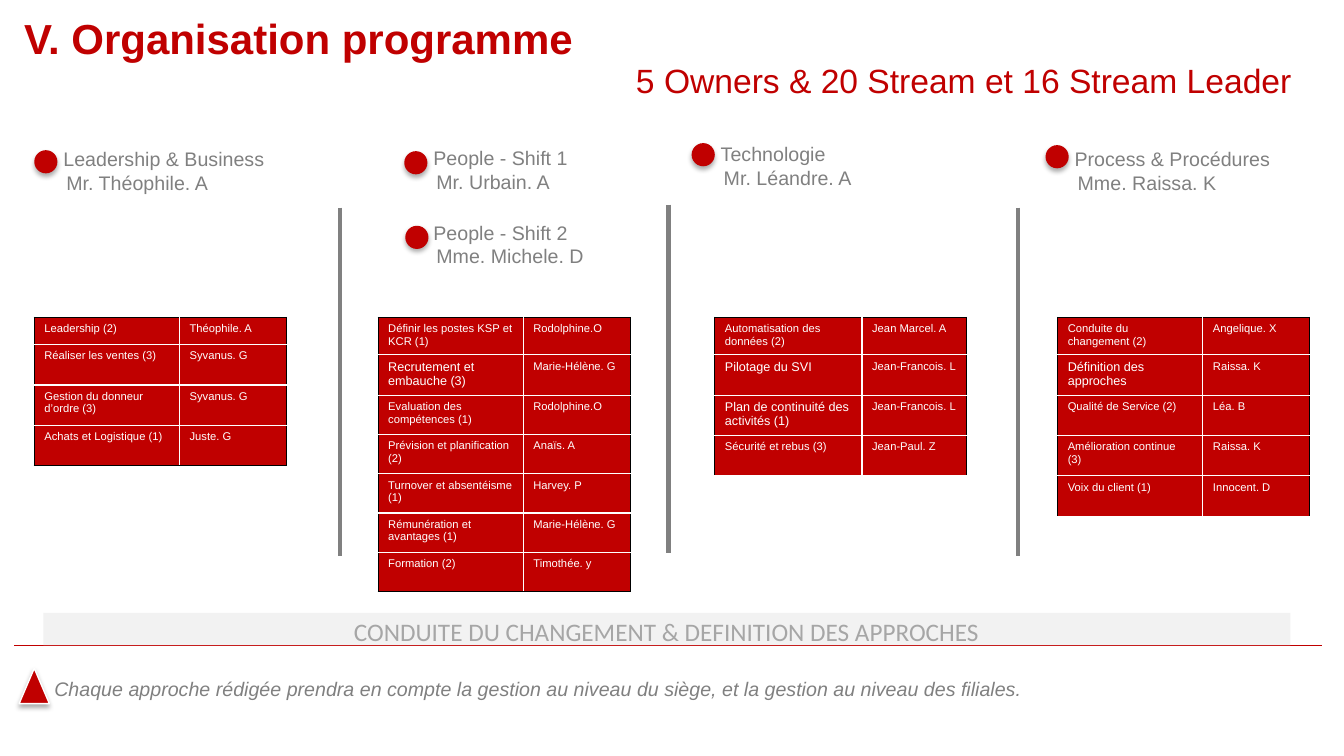
from dataclasses import dataclass

from lxml.etree import SubElement
from pptx import Presentation
from pptx.dml.color import RGBColor
from pptx.enum.shapes import MSO_CONNECTOR as Connector, MSO_SHAPE as Shape
from pptx.enum.text import PP_ALIGN as Align
from pptx.oxml.ns import qn
from pptx.util import Inches, Pt


@dataclass(frozen=True)
class Theme:
    red: str = "C00000"
    grey: str = "808080"
    pale: str = "F2F2F2"
    silver: str = "A6A6A6"
    white: str = "FFFFFF"
    black: str = "000000"
    sans: str = "Arial"
    band_font: str = "Calibri"
    title: int = 30
    subtitle: int = 24
    band: int = 18
    body: int = 14
    cell: int = 8
    large_cell: int = 9


THEME = Theme()
TABLE_TOP = 3.15
TABLE_WIDTH = 2.5

OWNERS = [
    (0.34, 1.41, 0.34, 1.49, "Leadership & Business", "Mr. Théophile. A"),
    (4.01, 1.4, 4.01, 1.5, "People - Shift 1", "Mr. Urbain. A"),
    (4.01, 2.14, 4.02, 2.24, "People - Shift 2", "Mme. Michele. D"),
    (6.86, 1.36, 6.86, 1.42, "Technologie", "Mr. Léandre. A"),
    (10.37, 1.41, 10.37, 1.44, "Process & Procédures", "Mme. Raissa. K"),
]
DIVIDERS = [(3.37, 2.06), (6.63, 2.03), (10.1, 2.06)]
LARGE_STREAMS = {
    "Recrutement et embauche (3)",
    "Pilotage du SVI",
    "Plan de continuité des activités (1)",
    "Définition des approches",
}
STREAM_TABLES = [
    (0.34, 1.44, 0.27, 0.4, THEME.black, [
        ("Leadership (2)", "Théophile. A"),
        ("Réaliser les ventes (3)", "Syvanus. G"),
        ("Gestion du donneur d’ordre (3)", "Syvanus. G"),
        ("Achats et Logistique (1)", "Juste. G"),
    ]),
    (3.75, 1.44, 0.37, 0.39, THEME.black, [
        ("Définir les postes KSP et KCR (1)", "Rodolphine.O"),
        ("Recrutement et embauche (3)", "Marie-Hélène. G"),
        ("Evaluation des compétences (1)", "Rodolphine.O"),
        ("Prévision et planification (2)", "Anaïs. A"),
        ("Turnover et absentéisme (1)", "Harvey. P"),
        ("Rémunération et avantages (1)", "Marie-Hélène. G"),
        ("Formation (2)", "Timothée. y"),
    ]),
    (7.09, 1.46, 0.37, 0.4, THEME.white, [
        ("Automatisation des données (2)", "Jean Marcel. A"),
        ("Pilotage du SVI", "Jean-Francois. L"),
        ("Plan de continuité des activités (1)", "Jean-Francois. L"),
        ("Sécurité et rebus (3)", "Jean-Paul. Z"),
    ]),
    (10.49, 1.44, 0.37, 0.4, THEME.white, [
        ("Conduite du changement (2)", "Angelique. X"),
        ("Définition des approches", "Raissa. K"),
        ("Qualité de Service (2)", "Léa. B"),
        ("Amélioration continue (3)", "Raissa. K"),
        ("Voix du client (1)", "Innocent. D"),
    ]),
]


def rgb(color):
    return RGBColor.from_string(color)


def write(para, text, size, color, name=THEME.sans, **extra):
    span = para.add_run()
    span.text = text
    span.font.color.rgb = rgb(color)
    for key, value in {"size": Pt(size), "name": name, **extra}.items():
        setattr(span.font, key, value)


def add_text(page, area, text, size, color, name=THEME.sans, layout=None, **extra):
    box = page.shapes.add_textbox(*map(Inches, area))
    box.text_frame.word_wrap = True
    para = box.text_frame.paragraphs[0]
    for key, value in (layout or {}).items():
        setattr(para, key, value)
    write(para, text, size, color, name, **extra)


def add_owner_label(page, left, top, area, owner):
    box = page.shapes.add_textbox(*map(Inches, (left, top, 2.9, 0.57)))
    frame = box.text_frame
    frame.word_wrap = True
    lines = [(frame.paragraphs[0], area, 0.19), (frame.add_paragraph(), owner, 0.22)]
    for para, text, indent in lines:
        para._p.get_or_add_pPr().set("marL", str(Inches(indent)))
        write(para, text, THEME.body, THEME.grey)


def add_figure(page, kind, area, color, outline=None, shadow=False):
    figure = page.shapes.add_shape(kind, *map(Inches, area))
    figure.shadow.inherit = False
    figure.fill.solid()
    figure.fill.fore_color.rgb = rgb(color)
    if outline:
        figure.line.color.rgb = rgb(outline)
        figure.line.width = Pt(1)
    else:
        figure.line.fill.background()
    if shadow:
        effects = figure._element.spPr.find(qn("a:effectLst"))
        outer = SubElement(effects, qn("a:outerShdw"), blurRad=str(Pt(3.5)),
                           dist=str(Pt(2.2)), dir="5400000", rotWithShape="0")
        tint = SubElement(outer, qn("a:srgbClr"), val=THEME.black)
        SubElement(tint, qn("a:alpha"), val="32000")


def add_line(page, start, end, color, width):
    line = page.shapes.add_connector(Connector.STRAIGHT, *map(Inches, start + end))
    line.line.color.rgb = rgb(color)
    line.line.width = Pt(width)
    SubElement(line._element.spPr, qn("a:effectLst"))


def set_borders(cell, colors):
    properties = cell._tc.get_or_add_tcPr()
    for position, (side, color) in enumerate(colors.items()):
        edge = SubElement(properties, qn(f"a:{side}"), w=str(Pt(1)))
        fill = SubElement(edge, qn("a:solidFill"))
        SubElement(fill, qn("a:srgbClr"), val=color)
        properties.remove(edge)
        properties.insert(position, edge)


def add_stream_table(page, left, stream_width, first_height, row_height, bottom, streams):
    height = first_height + row_height * (len(streams) - 1)
    area = map(Inches, (left, TABLE_TOP, TABLE_WIDTH, height))
    table = page.shapes.add_table(len(streams), 2, *area).table
    table.first_row = table.horz_banding = False
    table.columns[0].width = Inches(stream_width)
    table.columns[1].width = Inches(TABLE_WIDTH - stream_width)
    for row, texts in enumerate(streams):
        table.rows[row].height = Inches(row_height if row else first_height)
        for column, text in enumerate(texts):
            cell = table.cell(row, column)
            cell.fill.solid()
            cell.fill.fore_color.rgb = rgb(THEME.red)
            size = THEME.large_cell if text in LARGE_STREAMS else THEME.cell
            write(cell.text_frame.paragraphs[0], text, size, THEME.white)
            set_borders(cell, {
                "lnL": THEME.white if column else THEME.black,
                "lnR": THEME.black if column else THEME.white,
                "lnT": THEME.white if row else THEME.black,
                "lnB": bottom if row == len(streams) - 1 else THEME.white,
            })


def main():
    deck = Presentation()
    deck.slide_width, deck.slide_height = Inches(13.33), Inches(7.5)
    page = deck.slides.add_slide(deck.slide_layouts[6])

    tight = {"line_spacing": 0.9}
    add_text(page, (0.14, 0.13, 8.52, 0.56), "V. Organisation programme",
             THEME.title, THEME.red, layout=tight, bold=True)
    add_text(page, (6.21, 0.59, 7, 0.46), "5 Owners & 20 Stream et 16 Stream Leader",
             THEME.subtitle, THEME.red, layout=tight)

    for left, top, dot_left, dot_top, area, owner in OWNERS:
        add_owner_label(page, left, top, area, owner)
        add_figure(page, Shape.OVAL, (dot_left, dot_top, 0.23, 0.23), THEME.red, shadow=True)
    for left, top in DIVIDERS:
        add_line(page, (left, top), (left, top + 3.46), THEME.grey, 3)
    for stream_table in STREAM_TABLES:
        add_stream_table(page, *stream_table)

    add_line(page, (0.14, 6.4), (13.11, 6.4), THEME.red, 0.5)
    add_figure(page, Shape.RECTANGLE, (0.43, 6.08, 12.37, 0.32), THEME.pale)
    add_text(page, (2.54, 6.07, 8.14, 0.4),
             "CONDUITE DU CHANGEMENT & DEFINITION DES APPROCHES",
             THEME.band, THEME.silver, THEME.band_font, {"alignment": Align.CENTER})
    add_text(page, (0.44, 6.67, 9.92, 0.34),
             "Chaque approche rédigée prendra en compte la gestion au niveau du siège, "
             "et la gestion au niveau des filiales.",
             THEME.body, THEME.grey, italic=True)
    add_figure(page, Shape.ISOSCELES_TRIANGLE, (0.19, 6.63, 0.3, 0.35),
               THEME.red, THEME.white, shadow=True)
    deck.save("out.pptx")


if __name__ == "__main__":
    main()
